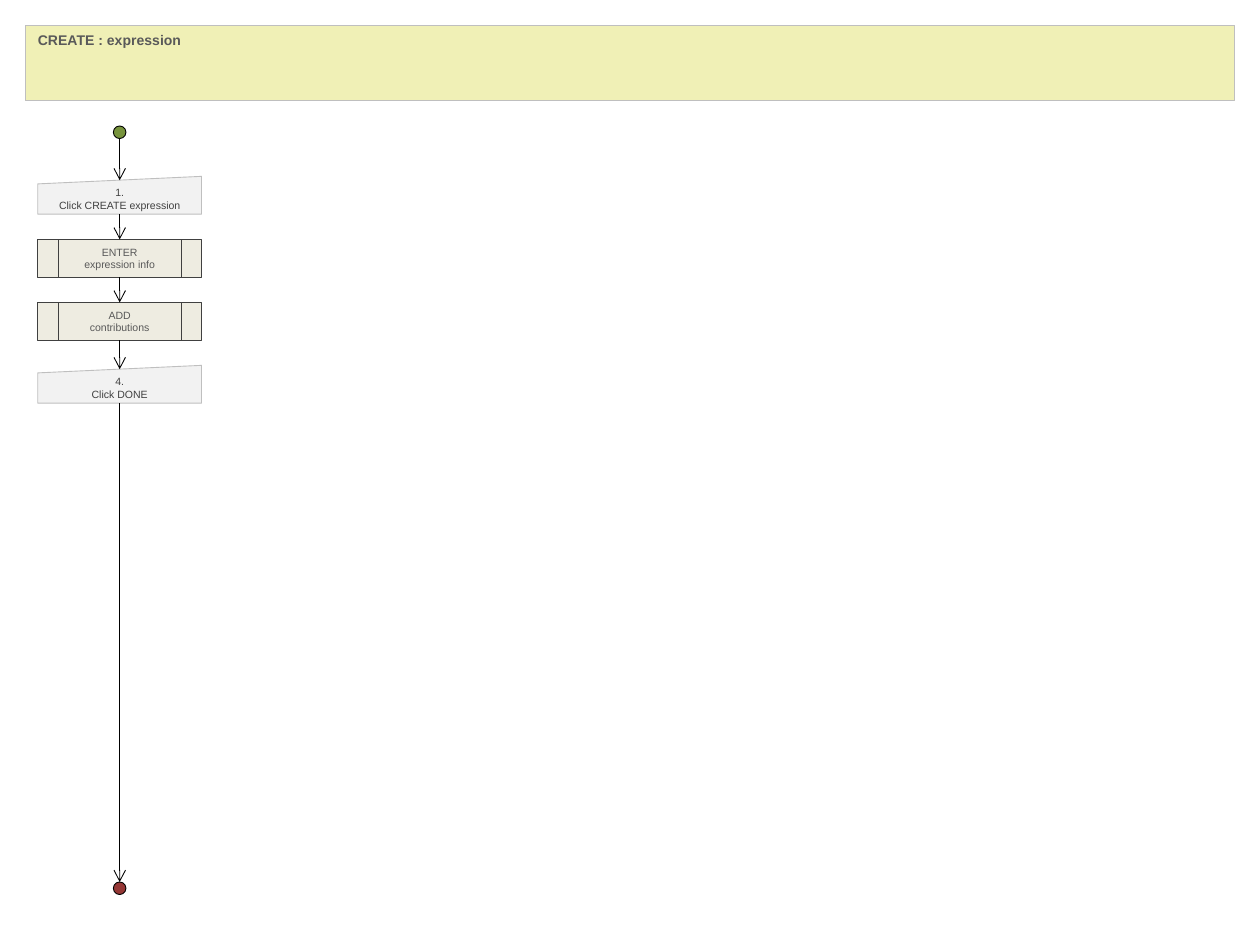
from lxml.etree import SubElement
from pptx import Presentation
from pptx.dml.color import RGBColor
from pptx.enum.shapes import MSO_CONNECTOR as CONN, MSO_SHAPE as SHAPE
from pptx.enum.text import MSO_ANCHOR as ANCHOR, MSO_AUTO_SIZE as AUTO, PP_ALIGN as ALIGN
from pptx.oxml.ns import qn
from pptx.util import Pt

# Content
TITLE = "CREATE : expression"
STEPS = [
    ("manual", "1.\nClick CREATE expression"),
    ("process", "ENTER\nexpression info"),
    ("process", "ADD\ncontributions"),
    ("manual", "4.\nClick DONE"),
]

COLORS = {
    "banner": "F0F0B6", "grey_line": "BFBFBF", "grey_text": "595959",
    "manual": "F2F2F2", "process": "EEECE1", "dark": "404040",
    "start": "77933C", "end": "953735", "black": "000000",
}
# kind: (preset, line colour, text colour, depth of the top edge as a share of the height)
KINDS = {
    "manual": (SHAPE.FLOWCHART_MANUAL_INPUT, "grey_line", "dark", 0.1),
    "process": (SHAPE.FLOWCHART_PREDEFINED_PROCESS, "dark", "grey_text", 0),
}

# Layout, in points
SLIDE_W, SLIDE_H = 720, 540
BANNER = (14.4, 14.4, 691.2, 43.2)
STEP_X, STEP_Y, STEP_W, STEP_H, PITCH = 21.6, 100.8, 93.6, 21.6, 36
AXIS = STEP_X + STEP_W / 2
DOT, START_Y, END_Y = 7.2, 72, 504
LINE_W = 0.5


def rgb(name):
    return RGBColor.from_string(COLORS[name])


def paint(sp, fill, line):
    sp.fill.solid()
    sp.fill.fore_color.rgb = rgb(fill)
    sp.line.color.rgb = rgb(line)
    sp.line.width = Pt(LINE_W)


def add_shape(s, preset, box, fill, line):
    sp = s.shapes.add_shape(preset, *map(Pt, box))
    sp.shadow.inherit = False
    paint(sp, fill, line)
    return sp


def write(sp, text, size, color, bold, align, anchor):
    tf = sp.text_frame
    frame = {"word_wrap": True, "auto_size": AUTO.NONE, "vertical_anchor": anchor}
    for key, value in frame.items():
        setattr(tf, key, value)
    p = tf.paragraphs[0]
    p.text = text
    p.alignment = align
    for r in p.runs:
        for key, value in {"name": "Arial", "size": Pt(size), "bold": bold}.items():
            setattr(r.font, key, value)
        r.font.color.rgb = rgb(color)


def add_arrow(s, y1, y2, source=None, target=None):
    cx = s.shapes.add_connector(CONN.STRAIGHT, Pt(AXIS), Pt(y1), Pt(AXIS), Pt(y2))
    if source is not None:
        cx.begin_connect(source, 2)
    if target is not None:
        cx.end_connect(target, 0)
    cx.line.color.rgb = rgb("black")
    cx.line.width = Pt(LINE_W)
    SubElement(cx.line._get_or_add_ln(), qn("a:tailEnd"), type="arrow")
    SubElement(cx._element.spPr, qn("a:effectLst"))


def main():
    prs = Presentation()
    prs.slide_width, prs.slide_height = Pt(SLIDE_W), Pt(SLIDE_H)
    s = prs.slides.add_slide(prs.slide_layouts[5])

    # Title banner
    title = s.shapes.title
    for key, value in zip(("left", "top", "width", "height"), BANNER):
        setattr(title, key, Pt(value))
    paint(title, "banner", "grey_line")
    write(title, TITLE, 8, "grey_text", True, ALIGN.LEFT, ANCHOR.TOP)

    # Start and end dots
    dots = {
        name: add_shape(s, SHAPE.OVAL, (AXIS - DOT / 2, y, DOT, DOT), name, "black")
        for name, y in (("start", START_Y), ("end", END_Y))
    }

    # Steps, each with the arrow that leads to it
    source, y_from = None, START_Y + DOT
    for i, (kind, text) in enumerate(STEPS):
        preset, line, color, slope = KINDS[kind]
        y = STEP_Y + i * PITCH
        step = add_shape(s, preset, (STEP_X, y, STEP_W, STEP_H), kind, line)
        write(step, text, 6, color, False, ALIGN.CENTER, ANCHOR.MIDDLE)
        # A sloped top is met at its true edge, so it is not joined
        add_arrow(s, y_from, y + slope * STEP_H, source, None if slope else step)
        source, y_from = step, y + STEP_H

    # Arrow to the end dot
    add_arrow(s, y_from, END_Y, source, dots["end"])

    prs.save("out.pptx")


if __name__ == "__main__":
    main()
